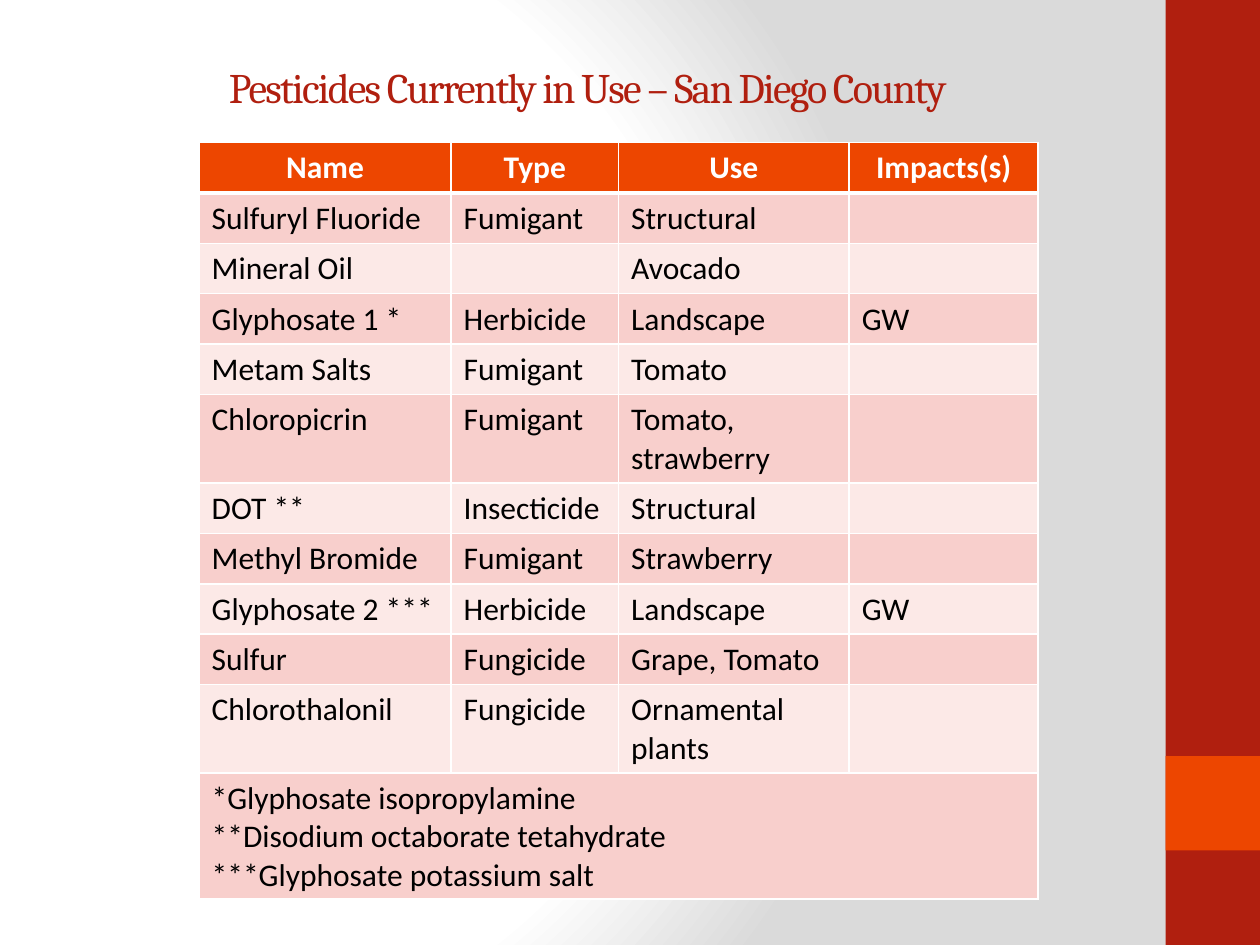
from lxml import etree
from pptx import Presentation
from pptx.dml.color import RGBColor
from pptx.enum.shapes import MSO_SHAPE as Shape
from pptx.enum.text import MSO_ANCHOR as Anchor, PP_ALIGN as Align
from pptx.oxml import parse_xml
from pptx.oxml.ns import nsdecls, qn
from pptx.util import Inches, Pt

WIDTH, HEIGHT = 10, 7.5
SIDEBAR = 0.75  # width of the red band and side of its accent square
RED, ORANGE, WHITE, BLACK = "B01F0F", "ED4600", "FFFFFF", "000000"
BANDS = ["F8CFCC", "FCE9E7"]

COLUMN_WIDTHS = [2, 1.33, 1.83, 1.5]
LINE_HEIGHTS = {1: 0.39, 2: 0.67, 3: 0.96}  # row height by lines of text
TWO_LINE_USES = ["Tomato, strawberry", "Ornamental plants"]

HEADINGS = ["Name", "Type", "Use", "Impacts(s)"]
PESTICIDES = [
    ["Sulfuryl Fluoride", "Fumigant", "Structural", ""],
    ["Mineral Oil", "", "Avocado", ""],
    ["Glyphosate 1 *", "Herbicide", "Landscape", "GW"],
    ["Metam Salts", "Fumigant", "Tomato", ""],
    ["Chloropicrin", "Fumigant", "Tomato, strawberry", ""],
    ["DOT **", "Insecticide", "Structural", ""],
    ["Methyl Bromide", "Fumigant", "Strawberry", ""],
    ["Glyphosate 2 ***", "Herbicide", "Landscape", "GW"],
    ["Sulfur", "Fungicide", "Grape, Tomato", ""],
    ["Chlorothalonil", "Fungicide", "Ornamental plants", ""],
]
FOOTNOTES = [
    "*Glyphosate isopropylamine",
    "**Disodium octaborate tetahydrate",
    "***Glyphosate potassium salt",
]


def paint(fill, color):
    fill.solid()
    fill.fore_color.rgb = RGBColor.from_string(color)


def style_font(font, name, size, color, bold=False):
    font.name, font.size, font.bold = name, Pt(size), bold
    font.color.rgb = RGBColor.from_string(color)


def set_background(slide):
    """Radial glow that fades from white to grey."""
    paint(slide.background.fill, WHITE)
    properties = slide.element.find(".//" + qn("p:bgPr"))
    stops = "".join(
        f'<a:gs pos="{share * 1000}"><a:srgbClr val="{color}"/></a:gs>'
        for share, color in [(0, WHITE), (75, WHITE), (100, "DADADA")]
    )
    glow = parse_xml(
        f'<a:gradFill {nsdecls("a")} rotWithShape="1"><a:gsLst>{stops}</a:gsLst>'
        '<a:path path="circle"><a:fillToRect l="20000" t="50000" r="100000" b="50000"/>'
        "</a:path></a:gradFill>"
    )
    properties.replace(properties.find(qn("a:solidFill")), glow)


def add_block(slide, top, height, color):
    block = slide.shapes.add_shape(
        Shape.RECTANGLE, Inches(WIDTH - SIDEBAR), Inches(top), Inches(SIDEBAR), Inches(height)
    )
    paint(block.fill, color)
    block.line.fill.background()
    block.shadow.inherit = False


def add_title(slide, text):
    title = slide.shapes.add_textbox(Inches(0.5), Inches(0.3), Inches(8.33), Inches(0.78))
    frame = title.text_frame
    frame.word_wrap = True
    frame.vertical_anchor = Anchor.MIDDLE
    paragraph = frame.paragraphs[0]
    paragraph.alignment = Align.CENTER
    run = paragraph.add_run()
    run.text = text
    style_font(run.font, "Cambria", 24, RED)
    run.font._element.set("spc", "-100")


def set_borders(cell, top=1, bottom=1):
    properties = cell._tc.get_or_add_tcPr()
    edges = [("lnL", 1), ("lnR", 1), ("lnT", top), ("lnB", bottom)]
    for place, (tag, width) in enumerate(edges):
        line = etree.Element(qn("a:" + tag), w=str(Pt(width)))
        color = etree.SubElement(etree.SubElement(line, qn("a:solidFill")), qn("a:srgbClr"))
        color.set("val", WHITE)
        properties.insert(place, line)


def fill_cell(cell, lines, fill, color=BLACK, heading=False):
    paint(cell.fill, fill)
    frame = cell.text_frame
    for number, line in enumerate(lines):
        paragraph = frame.add_paragraph() if number else frame.paragraphs[0]
        paragraph.alignment = Align.CENTER if heading else Align.LEFT
        paragraph.font.size = Pt(18)
        if line:
            run = paragraph.add_run()
            run.text = line
            style_font(run.font, "Calibri", 18, color, heading)


def add_pesticide_table(slide):
    line_counts = [1]
    line_counts += [2 if use in TWO_LINE_USES else 1 for _, _, use, _ in PESTICIDES]
    line_counts.append(len(FOOTNOTES))
    heights = [LINE_HEIGHTS[count] for count in line_counts]
    table = slide.shapes.add_table(
        len(heights), len(HEADINGS), Inches(1.58), Inches(1.13),
        Inches(sum(COLUMN_WIDTHS)), Inches(sum(heights)),
    ).table
    for column, width in zip(table.columns, COLUMN_WIDTHS):
        column.width = Inches(width)
    for row, height in zip(table.rows, heights):
        row.height = Inches(height)

    # Headings
    for column, heading in enumerate(HEADINGS):
        fill_cell(table.cell(0, column), [heading], ORANGE, WHITE, heading=True)

    # One banded row for each pesticide
    for number, pesticide in enumerate(PESTICIDES):
        for column, text in enumerate(pesticide):
            fill_cell(table.cell(number + 1, column), [text], BANDS[number % 2])

    # Footnotes across the whole width
    last = len(heights) - 1
    footer = table.cell(last, 0)
    footer.merge(table.cell(last, len(HEADINGS) - 1))
    fill_cell(footer, FOOTNOTES, BANDS[0])

    # White rules, heavier below the headings
    for number, row in enumerate(table.rows):
        for cell in row.cells:
            set_borders(cell, top=3 if number == 1 else 1, bottom=3 if number == 0 else 1)


def main():
    deck = Presentation()
    deck.slide_width, deck.slide_height = Inches(WIDTH), Inches(HEIGHT)
    slide = deck.slides.add_slide(deck.slide_layouts[6])

    # Backdrop and sidebar
    set_background(slide)
    add_block(slide, 0, HEIGHT, RED)
    add_block(slide, HEIGHT - 2 * SIDEBAR, SIDEBAR, ORANGE)

    # Content
    add_title(slide, "Pesticides Currently in Use – San Diego County")
    add_pesticide_table(slide)

    deck.save("out.pptx")


if __name__ == "__main__":
    main()
